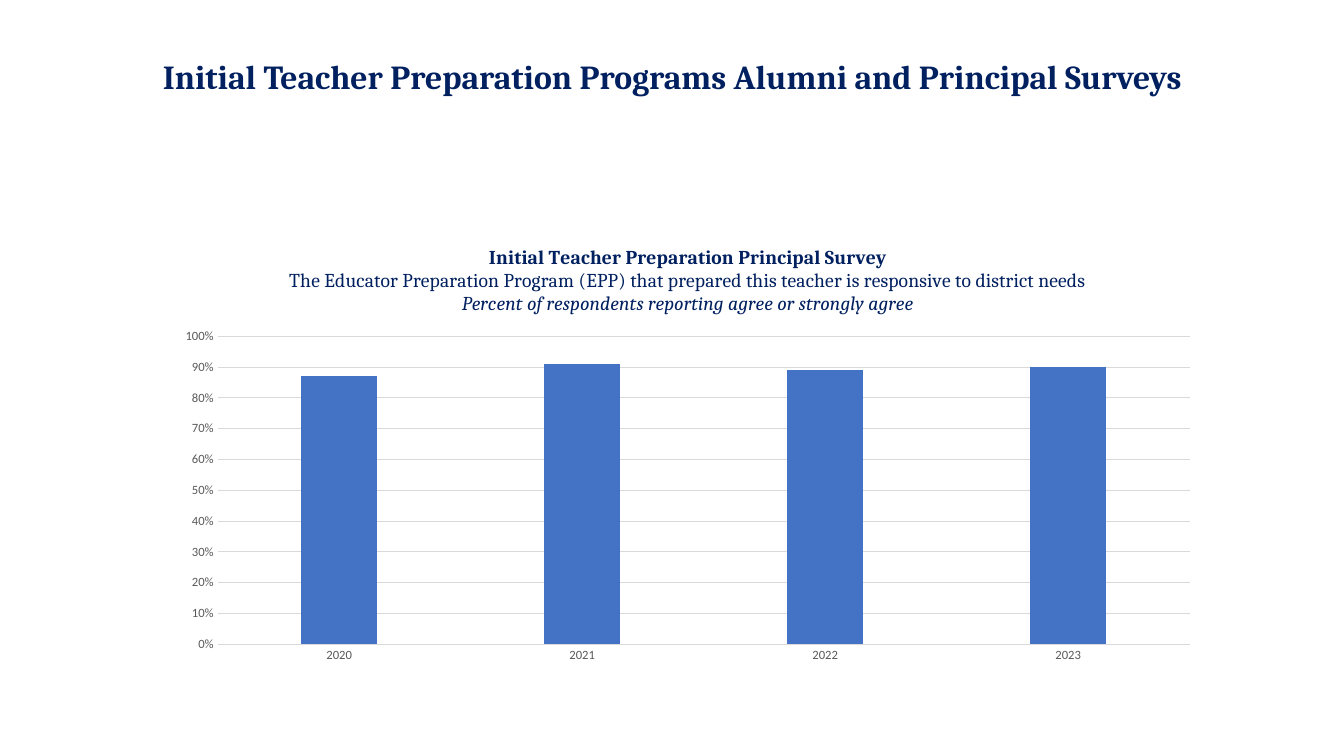
"""Build the slide of the principal survey with its column chart."""
from dataclasses import dataclass

from lxml.etree import SubElement as Sub
from pptx import Presentation
from pptx.chart.axis import _BaseAxis as Axis
from pptx.chart.chart import Chart
from pptx.chart.data import CategoryChartData as Data
from pptx.dml.color import RGBColor as Rgb
from pptx.enum.chart import XL_CHART_TYPE as Kind, XL_TICK_MARK as Tick
from pptx.enum.text import MSO_ANCHOR as Anchor, PP_ALIGN as Align
from pptx.oxml.ns import qn
from pptx.slide import Slide
from pptx.text.text import TextFrame as Frame
from pptx.util import Cm, Pt

HUES = {"navy": "002060", "blue": "4472C4", "grey": "595959", "rule": "D9D9D9"}


@dataclass(frozen=True)
class Line:
    text: str
    size: int
    bold: bool = False
    slant: bool = False


@dataclass(frozen=True)
class Box:
    left: float
    top: float
    wide: float
    high: float

    def place(self) -> tuple[Cm, Cm, Cm, Cm]:
        return Cm(self.left), Cm(self.top), Cm(self.wide), Cm(self.high)


HEAD = Line("Initial Teacher Preparation Programs Alumni and Principal Surveys", 24, bold=True)
NOTES = (
    Line("Initial Teacher Preparation Principal Survey", 14, bold=True),
    Line("The Educator Preparation Program (EPP) that prepared this teacher "
         "is responsive to district needs", 14),
    Line("Percent of respondents reporting agree or strongly agree", 14, slant=True),
)
RATES = {"2020": 0.87, "2021": 0.91, "2022": 0.89, "2023": 0.9}
HEAD_BOX = Box(2.34, 1.09, 29.2, 3.7)
CHART_BOX = Box(4.17, 5.72, 26.34, 11.25)
PLOT = {"x": 0.05, "y": 0.245, "w": 0.93, "h": 0.69}


def hue(name: str) -> Rgb:
    return Rgb.from_string(HUES[name])


def write(frame: Frame, lines: tuple[Line, ...]) -> None:
    for spot, line in enumerate(lines):
        para = frame.add_paragraph() if spot else frame.paragraphs[0]
        para.alignment = Align.CENTER
        run = para.add_run()
        run.text = line.text
        font = run.font
        font.name, font.size = "Cambria", Pt(line.size)
        font.bold, font.italic = line.bold, line.slant
        font.color.rgb = hue("navy")


def add_head(slide: Slide) -> None:
    frame = slide.shapes.add_textbox(*HEAD_BOX.place()).text_frame
    frame.word_wrap = True
    frame.vertical_anchor = Anchor.TOP
    frame.margin_top = Cm(0.44)
    write(frame, (HEAD,))
    frame.paragraphs[0].line_spacing = 0.9


def style_axis(axis: Axis) -> None:
    axis.major_tick_mark = axis.minor_tick_mark = Tick.NONE
    font = axis.tick_labels.font
    font.name, font.size = "Calibri", Pt(9)
    font.color.rgb = hue("grey")
    axis.format.line.width = Pt(0.75)
    axis.format.line.color.rgb = hue("rule")


def fix_plot(chart: Chart) -> None:
    area = chart.plots[0]._element.getparent()
    for old in area.findall(qn("c:layout")):
        area.remove(old)
    frame = Sub(area, qn("c:layout"))
    area.insert(0, frame)
    man = Sub(frame, qn("c:manualLayout"))
    Sub(man, qn("c:layoutTarget")).set("val", "inner")
    for side in "xy":
        Sub(man, qn(f"c:{side}Mode")).set("val", "edge")
    for side, part in PLOT.items():
        Sub(man, qn(f"c:{side}")).set("val", str(part))


def add_bars(slide: Slide) -> None:
    data = Data(number_format="0%")
    data.categories = list(RATES)
    data.add_series("Series 1", list(RATES.values()))
    chart = slide.shapes.add_chart(Kind.COLUMN_CLUSTERED, *CHART_BOX.place(), data).chart
    chart.has_legend = False
    chart.font.name, chart.font.size = "Calibri", Pt(10)
    chart.has_title = True
    chart.chart_title.include_in_layout = False
    write(chart.chart_title.text_frame, NOTES)
    years, scale = chart.category_axis, chart.value_axis
    for axis in (years, scale):
        style_axis(axis)
    scale.format.line.fill.background()
    scale.minimum_scale, scale.maximum_scale, scale.major_unit = 0, 1, 0.1
    scale.tick_labels.number_format = "0%"
    scale.tick_labels.number_format_is_linked = False
    grid = scale.major_gridlines.format.line
    grid.width = Pt(0.75)
    grid.color.rgb = hue("rule")
    plot = chart.plots[0]
    plot.gap_width, plot.overlap = 219, -27
    plot.vary_by_categories = False
    fill = plot.series[0].format.fill
    fill.solid()
    fill.fore_color.rgb = hue("blue")
    fix_plot(chart)


def main() -> None:
    deck = Presentation()
    deck.slide_width, deck.slide_height = Cm(33.87), Cm(19.05)
    slide = deck.slides.add_slide(deck.slide_layouts[6])
    add_head(slide)
    add_bars(slide)
    deck.save("out.pptx")


if __name__ == "__main__":
    main()
